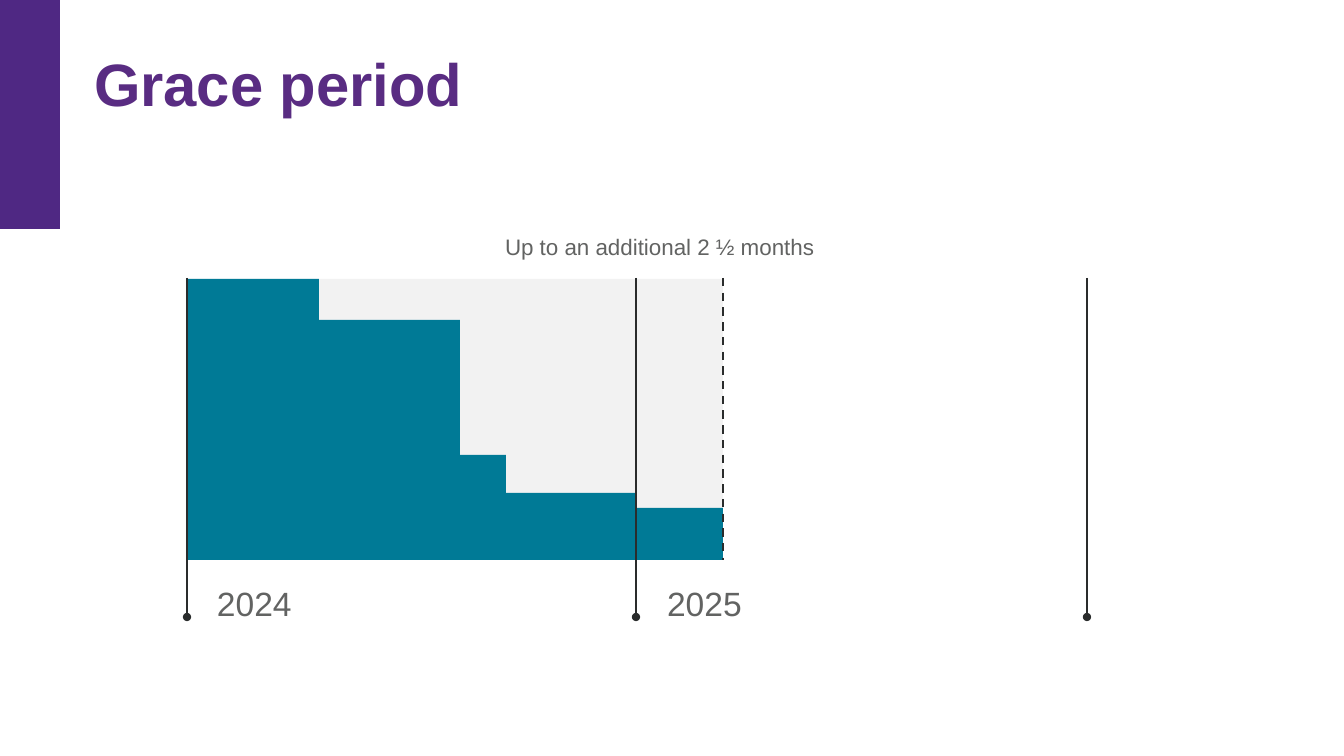
from lxml.etree import SubElement
from pptx import Presentation
from pptx.dml.color import RGBColor
from pptx.enum.dml import MSO_LINE
from pptx.enum.shapes import MSO_CONNECTOR, MSO_SHAPE
from pptx.enum.text import MSO_ANCHOR, PP_ALIGN
from pptx.oxml.ns import qn
from pptx.util import Pt

PX = 914400 / 100.8
PURPLE, TITLE_PURPLE = "4F2883", "592C82"
TEAL, PALE, GREY, DARK = "007A96", "F2F2F2", "626362", "2A2C2C"

TITLE = "Grace period"
TITLE_BOX = (94, 40, 1194, 75)
ACCENT_BAR = (0, 0, 60, 229)
CHART_TOP, CHART_BOTTOM = 279, 560
LINE_TOP, YEAR_LINE_BOTTOM = 278, 617
PERIODS = [(186, 451), (636, 87)]
BALANCES = [(188, 279, 131), (298, 320, 162), (375, 455, 131), (493, 493, 143), (631, 508, 92)]
LABELS = [
    ("2024", (204, 570, 439, 67), 24),
    ("2025", (654, 570, 403, 67), 24),
    ("Up to an additional 2 ½ months", (492, 220, 345, 54), 16),
]
YEAR_LINES = [187, 636, 1087]
GRACE_LINE = 723


def px(*lengths):
    return [round(length * PX) for length in lengths]


def color(hex_string):
    return RGBColor.from_string(hex_string)


def style_text(text_frame, text, size, hex_string, inset, bold=False):
    text_frame.text = text
    text_frame.word_wrap = True
    text_frame.vertical_anchor = MSO_ANCHOR.TOP
    margin = px(inset)[0]
    text_frame.margin_left = text_frame.margin_right = margin
    text_frame.margin_top = text_frame.margin_bottom = margin
    paragraph = text_frame.paragraphs[0]
    paragraph.alignment = PP_ALIGN.LEFT
    font = paragraph.runs[0].font
    font.name, font.size, font.bold = "Arial", Pt(size), bold
    font.color.rgb = color(hex_string)
    return paragraph


def add_block(slide, box, hex_string, kind=MSO_SHAPE.RECTANGLE):
    shape = slide.shapes.add_shape(kind, *px(*box))
    shape.shadow.inherit = False
    shape.fill.solid()
    shape.fill.fore_color.rgb = color(hex_string)
    shape.line.fill.background()
    return shape


def add_marker(slide, x, bottom):
    connector = slide.shapes.add_connector(
        MSO_CONNECTOR.STRAIGHT, *px(x, LINE_TOP, x, bottom))
    connector.line.color.rgb = color(DARK)
    connector.line.width = Pt(1.5)
    SubElement(connector._element.spPr, qn("a:effectLst"))
    return connector


def main():
    """Build the grace period timeline slide."""
    presentation = Presentation()
    presentation.slide_width, presentation.slide_height = px(1344, 756)
    slide = presentation.slides.add_slide(presentation.slide_layouts[5])

    add_block(slide, ACCENT_BAR, PURPLE)
    title = slide.shapes.title
    title.left, title.top, title.width, title.height = px(*TITLE_BOX)
    style_text(title.text_frame, TITLE, 42.7, TITLE_PURPLE, 0, True).line_spacing = 1.1

    for left, width in PERIODS:
        box = (left, CHART_TOP, width, CHART_BOTTOM - CHART_TOP)
        add_block(slide, box, PALE, MSO_SHAPE.PENTAGON).adjustments[0] = 0
    for left, top, width in BALANCES:
        add_block(slide, (left, top, width, CHART_BOTTOM - top), TEAL)

    for text, box, size in LABELS:
        label = slide.shapes.add_textbox(*px(*box))
        style_text(label.text_frame, text, size, GREY, 13)

    add_marker(slide, GRACE_LINE, CHART_BOTTOM).line.dash_style = MSO_LINE.DASH
    for x in YEAR_LINES:
        year_line = add_marker(slide, x, YEAR_LINE_BOTTOM).line
        SubElement(year_line._get_or_add_ln(), qn("a:tailEnd"), type="oval")

    presentation.save("out.pptx")


if __name__ == "__main__":
    main()
